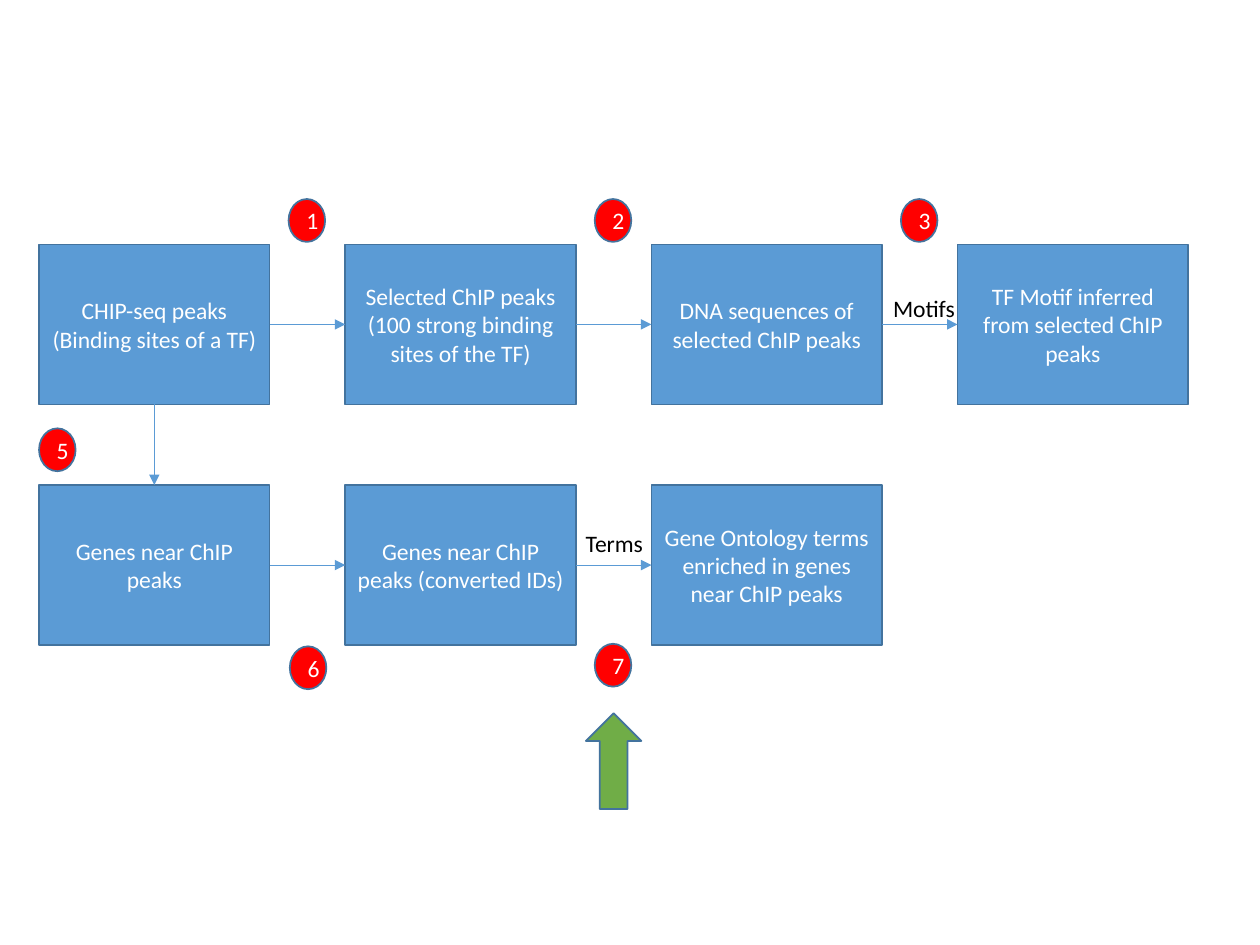
"""Build the ChIP-seq analysis workflow slide."""
from lxml.etree import SubElement
from pptx import Presentation
from pptx.dml.color import RGBColor
from pptx.enum.shapes import MSO_CONNECTOR, MSO_SHAPE
from pptx.enum.text import MSO_ANCHOR, MSO_AUTO_SIZE, PP_ALIGN
from pptx.oxml.ns import qn
from pptx.util import Inches, Pt

ROWS = [
    ["CHIP-seq peaks (Binding sites of a TF)",
     "Selected ChIP peaks (100 strong binding sites of the TF)",
     "DNA sequences of selected ChIP peaks",
     "TF Motif inferred from selected ChIP peaks"],
    ["Genes near ChIP peaks",
     "Genes near ChIP peaks (converted IDs)",
     "Gene Ontology terms enriched in genes near ChIP peaks"],
]
STEPS = [("1", 2.29, 1.58), ("2", 4.72, 1.58), ("3", 7.15, 1.58),
         ("5", 0.31, 3.4), ("6", 2.3, 5.13), ("7", 4.72, 5.11)]
TOOLS = [("Motifs", 6.99, 2.28, 0.71), ("Terms", 4.55, 4.15, 0.68)]
POINTER = (4.65, 5.66, 0.44, 0.76)

LEFT, TOP, COL_STEP, ROW_STEP = 0.31, 1.94, 2.43, 1.91
BOX_W, BOX_H = 1.83, 1.27
STEP_W, STEP_H = 0.29, 0.34
TOOL_H = 0.33

THEME = {
    "box": RGBColor.from_string("5B9BD5"),
    "edge": RGBColor.from_string("43739E"),
    "step": RGBColor.from_string("FF0000"),
    "pointer": RGBColor.from_string("70AD47"),
    "light": RGBColor.from_string("FFFFFF"),
    "dark": RGBColor.from_string("000000"),
    "edge_width": Pt(1),
    "link_width": Pt(0.5),
    "font": {"name": "Calibri", "size": Pt(13.5)},
}


def set_text(sp, text, color, frame, align):
    tf = sp.text_frame
    for key, value in frame.items():
        setattr(tf, key, value)
    p = tf.paragraphs[0]
    p.alignment = align
    r = p.add_run()
    r.text = text
    for key, value in THEME["font"].items():
        setattr(r.font, key, value)
    r.font.color.rgb = color


def add_shape(s, kind, box, fill, text=None):
    sp = s.shapes.add_shape(kind, *map(Inches, box))
    sp.shadow.inherit = False
    sp.fill.solid()
    sp.fill.fore_color.rgb = THEME[fill]
    sp.line.color.rgb = THEME["edge"]
    sp.line.width = THEME["edge_width"]
    if text:
        frame = {"word_wrap": True, "vertical_anchor": MSO_ANCHOR.MIDDLE}
        set_text(sp, text, THEME["light"], frame, PP_ALIGN.CENTER)
    return sp


def add_label(s, text, left, top, width):
    sp = s.shapes.add_textbox(*map(Inches, (left, top, width, TOOL_H)))
    frame = {"word_wrap": False, "auto_size": MSO_AUTO_SIZE.SHAPE_TO_FIT_TEXT}
    set_text(sp, text, THEME["dark"], frame, PP_ALIGN.LEFT)


def link(s, start, start_side, end, end_side):
    cx = s.shapes.add_connector(MSO_CONNECTOR.STRAIGHT, 0, 0, 0, 0)
    cx.begin_connect(start, start_side)
    cx.end_connect(end, end_side)
    cx.line.color.rgb = THEME["box"]
    cx.line.width = THEME["link_width"]
    SubElement(cx.line._get_or_add_ln(), qn("a:tailEnd"), type="triangle")
    SubElement(cx._element.spPr, qn("a:effectLst"))


def main():
    prs = Presentation()
    prs.slide_width, prs.slide_height = Inches(10), Inches(7.5)
    s = prs.slides.add_slide(prs.slide_layouts[6])
    grid = [[add_shape(s, MSO_SHAPE.RECTANGLE,
                       (LEFT + col * COL_STEP, TOP + row * ROW_STEP, BOX_W, BOX_H),
                       "box", text)
             for col, text in enumerate(texts)]
            for row, texts in enumerate(ROWS)]
    for boxes in grid:
        for start, end in zip(boxes, boxes[1:]):
            link(s, start, 3, end, 1)
    link(s, grid[0][0], 2, grid[1][0], 0)
    for tool in TOOLS:
        add_label(s, *tool)
    for number, left, top in STEPS:
        add_shape(s, MSO_SHAPE.OVAL, (left, top, STEP_W, STEP_H), "step", number)
    add_shape(s, MSO_SHAPE.DOWN_ARROW, POINTER, "pointer").rotation = 180
    prs.save("out.pptx")


if __name__ == "__main__":
    main()
